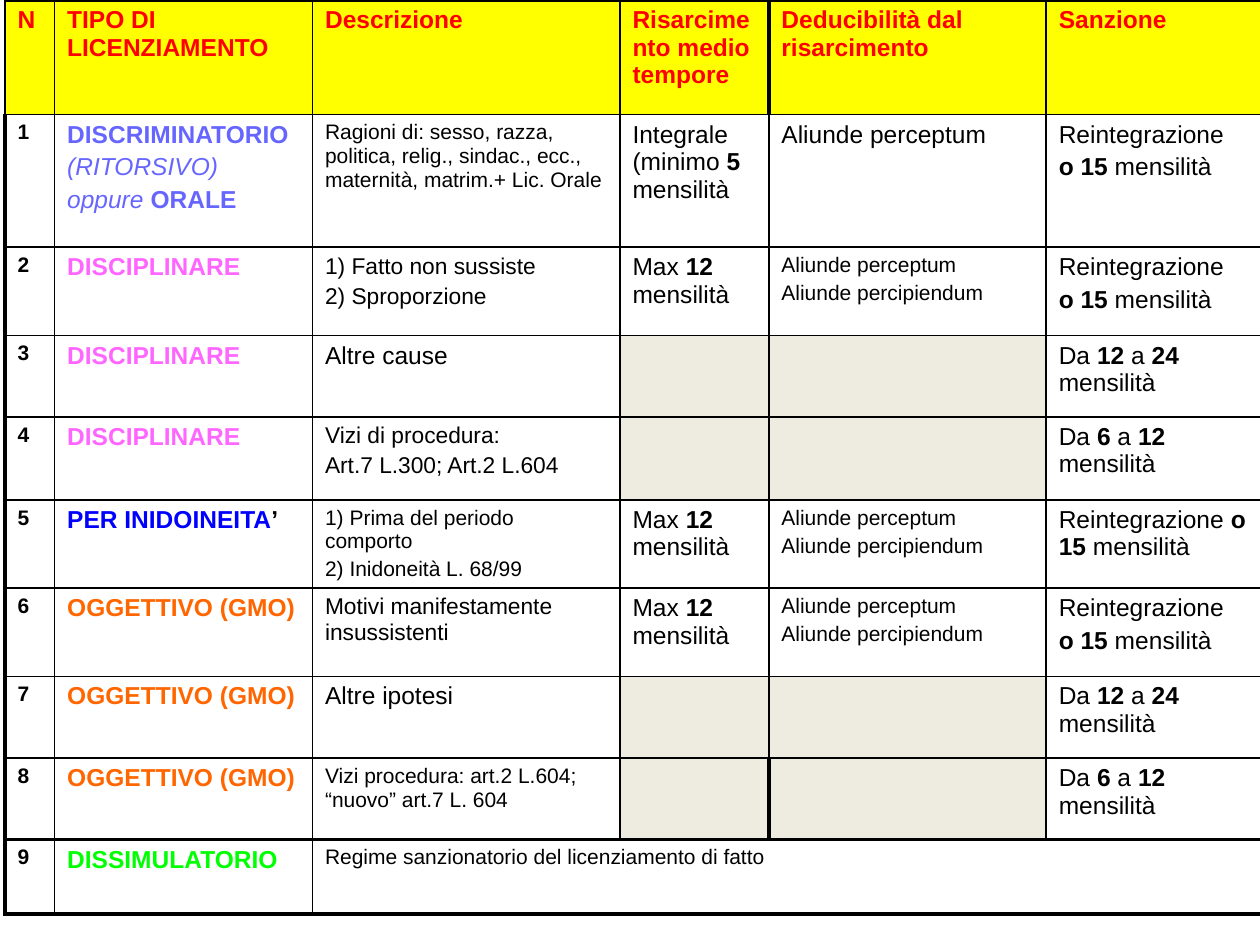
from lxml import etree
from pptx import Presentation
from pptx.dml.color import RGBColor
from pptx.oxml.ns import qn
from pptx.util import Pt

COLORS = {
    "black": "000000", "header_fill": "FFFF00", "header_text": "FF0000",
    "not_due": "EEECE1", "discriminatory": "6666FF", "disciplinary": "FF66FF",
    "unfitness": "0000FF", "objective": "FF6600", "disguised": "00FF00",
}
FONT = "Arial"
THIN, THICK = 1, 2.25
COLUMN_WIDTHS = [28.3, 147.4, 175.7, 85.1, 158.5, 125]
ROW_HEIGHTS = [65.5, 75.8, 50.4, 46.5, 47.5, 50.4, 50.4, 46.8, 46.5, 42.5]
HEADERS = ["N", "TIPO DI LICENZIAMENTO", "Descrizione", "Risarcimento medio tempore",
           "Deducibilità dal risarcimento", "Sanzione"]
MAX_12 = ("Max *12* mensilità", 14)
BOTH_DEDUCTIONS = ("Aliunde perceptum\nAliunde percipiendum", 12)
REINSTATEMENT = ("Reintegrazione\n*o 15* mensilità", 14)
FROM_12_TO_24 = ("Da *12* a *24* mensilità", 14)
FROM_6_TO_12 = ("Da *6* a *12* mensilità", 14)
DISMISSALS = [
    ("discriminatory", "*DISCRIMINATORIO*\n(RITORSIVO)\noppure *ORALE*",
     [("Ragioni di: sesso, razza, politica, relig., sindac., ecc., "
       "maternità, matrim.+ Lic. Orale", 12),
      ("Integrale (minimo *5* mensilità", 14), ("Aliunde perceptum", 14), REINSTATEMENT]),
    ("disciplinary", "*DISCIPLINARE*",
     [("1) Fatto non sussiste\n2) Sproporzione", 13), MAX_12, BOTH_DEDUCTIONS, REINSTATEMENT]),
    ("disciplinary", "*DISCIPLINARE*", [("Altre cause", 14), None, None, FROM_12_TO_24]),
    ("disciplinary", "*DISCIPLINARE*",
     [("Vizi di procedura:\nArt.7 L.300; Art.2 L.604", 13), None, None, FROM_6_TO_12]),
    ("unfitness", "*PER INIDOINEITA**’*",
     [("1) Prima del periodo comporto\n2) Inidoneità L. 68/99", 12), MAX_12, BOTH_DEDUCTIONS,
      ("Reintegrazione *o 15* mensilità", 14)]),
    ("objective", "*OGGETTIVO (GMO)*",
     [("Motivi manifestamente insussistenti", 13), MAX_12, BOTH_DEDUCTIONS, REINSTATEMENT]),
    ("objective", "*OGGETTIVO (GMO)*", [("Altre ipotesi", 14), None, None, FROM_12_TO_24]),
    ("objective", "*OGGETTIVO (GMO)*",
     [("Vizi procedura: art.2 L.604; “nuovo” art.7 L. 604", 12), None, None, FROM_6_TO_12]),
    ("disguised", "*DISSIMULATORIO*",
     [("Regime sanzionatorio del licenziamento di fatto", 12)]),
]


def rgb(name):
    """Return the named colour."""
    return RGBColor.from_string(COLORS[name])


def write_cell(cell, text, size, color="black", italic_plain=False):
    """Write one paragraph per line, with text between asterisks in bold."""
    for index, line in enumerate(text.split("\n")):
        frame = cell.text_frame
        paragraph = frame.add_paragraph() if index else frame.paragraphs[0]
        paragraph.font.name = FONT
        paragraph.font.size = Pt(size)
        paragraph.font.color.rgb = rgb(color)
        properties = paragraph._p.get_or_add_pPr()
        spacing = etree.Element(qn("a:spcBef"))
        etree.SubElement(spacing, qn("a:spcPct"), val="20000")
        properties.insert(0, spacing)
        for position, part in enumerate(line.split("*")):
            if part:
                run = paragraph.add_run()
                run.text = part
                bold = position % 2 == 1
                run.font.bold = bold
                run.font.italic = italic_plain and not bold
                run.font.name = FONT
                run.font.size = Pt(size)
                run.font.color.rgb = rgb(color)


def border_widths(row, column):
    """Return the left, right, top and bottom line widths of a cell."""
    last_row, last_column = len(ROW_HEIGHTS) - 1, len(COLUMN_WIDTHS) - 1
    split = row in (0, last_row - 1)
    thick = {
        "L": (column == 0 and row > 0) or (column == 4 and split),
        "R": column == last_column or (column == 3 and split),
        "T": row in (0, last_row),
        "B": row >= last_row - 1,
    }
    return {side: THICK if heavy else THIN for side, heavy in thick.items()}


def draw_borders(cell, widths):
    """Draw the cell's lines, leaving out the inner sides of a merged cell."""
    properties = cell._tc.get_or_add_tcPr()
    for side, width in widths.items():
        if cell.is_spanned and side in "LR":
            continue
        line = etree.SubElement(properties, qn(f"a:ln{side}"), w=str(Pt(width)))
        fill = etree.SubElement(line, qn("a:solidFill"))
        etree.SubElement(fill, qn("a:srgbClr"), val=COLORS["black"])


def add_dismissal_table(slide, left, top):
    """Add the table of dismissal types and their sanctions."""
    table = slide.shapes.add_table(
        len(ROW_HEIGHTS), len(COLUMN_WIDTHS), Pt(left), Pt(top),
        Pt(sum(COLUMN_WIDTHS)), Pt(sum(ROW_HEIGHTS))).table
    table.first_row = table.horz_banding = False
    for column, width in zip(table.columns, COLUMN_WIDTHS):
        column.width = Pt(width)
    for row, height in zip(table.rows, ROW_HEIGHTS):
        row.height = Pt(height)
    last_row = len(ROW_HEIGHTS) - 1
    table.cell(last_row, 2).merge(table.cell(last_row, len(COLUMN_WIDTHS) - 1))

    for row in range(len(ROW_HEIGHTS)):
        for column in range(len(COLUMN_WIDTHS)):
            cell = table.cell(row, column)
            draw_borders(cell, border_widths(row, column))
            cell.fill.background()

    for column, header in enumerate(HEADERS):
        cell = table.cell(0, column)
        cell.fill.solid()
        cell.fill.fore_color.rgb = rgb("header_fill")
        write_cell(cell, f"*{header}*", 14, "header_text")

    for row, (color, kind, details) in enumerate(DISMISSALS, 1):
        write_cell(table.cell(row, 0), f"*{row}*", 12)
        kind_cell = table.cell(row, 1)
        write_cell(kind_cell, kind, 14, color, italic_plain=True)
        if color == "unfitness":
            apostrophe = kind_cell.text_frame.paragraphs[0].runs[-1]
            apostrophe.font.color.rgb = rgb("black")
        for column, detail in enumerate(details, 2):
            cell = table.cell(row, column)
            if detail:
                write_cell(cell, *detail)
            else:
                cell.fill.solid()
                cell.fill.fore_color.rgb = rgb("not_due")


def main():
    """Build and save the presentation."""
    presentation = Presentation()
    presentation.slide_width, presentation.slide_height = Pt(720), Pt(540)
    slide = presentation.slides.add_slide(presentation.slide_layouts[6])
    add_dismissal_table(slide, 2.9, 0)
    presentation.save("out.pptx")


if __name__ == "__main__":
    main()
